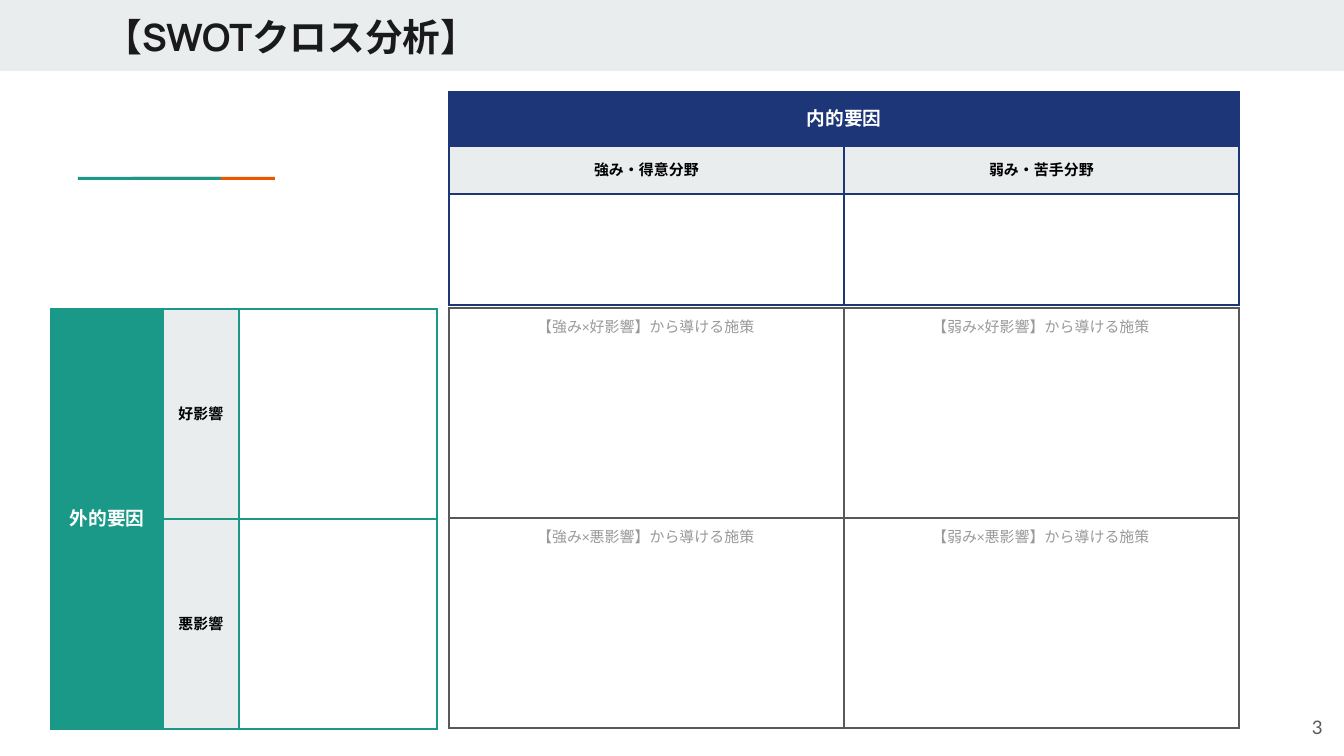
from lxml.etree import SubElement
from pptx import Presentation
from pptx.dml.color import RGBColor
from pptx.enum.shapes import MSO_SHAPE
from pptx.enum.text import MSO_ANCHOR, MSO_AUTO_SIZE, PP_ALIGN
from pptx.oxml.ns import qn
from pptx.util import Inches, Pt

PX = 9144000 / 1344  # EMU in one px of a 1344 x 756 slide

WHITE = RGBColor(0xFF, 0xFF, 0xFF)
BLACK = RGBColor(0x00, 0x00, 0x00)
INK = RGBColor(0x1A, 0x1A, 0x1A)
DARK_GREY = RGBColor(0x59, 0x59, 0x59)
MID_GREY = RGBColor(0x99, 0x99, 0x99)
PALE_GREY = RGBColor(0xE9, 0xED, 0xEE)
NAVY = RGBColor(0x1C, 0x36, 0x78)
TEAL = RGBColor(0x1A, 0x99, 0x88)
ORANGE = RGBColor(0xEB, 0x56, 0x00)

# Cross grid: two strategy columns and two strategy rows
GRID_LEFT, GRID_TOP = 449, 308
GRID_COLUMN, GRID_ROW = 395, 210


def px(*lengths):
    return [round(length * PX) for length in lengths]


def add_bar(slide, box, color):
    bar = slide.shapes.add_shape(MSO_SHAPE.RECTANGLE, *px(*box))
    bar.shadow.inherit = False
    bar.fill.solid()
    bar.fill.fore_color.rgb = color
    bar.line.fill.background()


def write(frame, text, size, font, color, bold=False, align=PP_ALIGN.CENTER):
    paragraph = frame.paragraphs[0]
    paragraph.alignment = align
    paragraph.line_spacing = 1.0
    run = paragraph.add_run()
    run.text = text
    run.font.size = Pt(size)
    run.font.bold = bold
    run.font.name = font
    run.font.color.rgb = color
    # East Asian glyphs follow the same typeface
    SubElement(run.font._element, qn("a:ea"), typeface=font)


def set_insets(target):
    target.margin_left = target.margin_right = Inches(0.1)
    target.margin_top = target.margin_bottom = Inches(0.1)


def add_label(slide, box, text, size, font, color, align=PP_ALIGN.CENTER,
              anchor=MSO_ANCHOR.TOP, fit=MSO_AUTO_SIZE.NONE):
    frame = slide.shapes.add_textbox(*px(*box)).text_frame
    frame.word_wrap = True
    frame.auto_size = fit
    frame.vertical_anchor = anchor
    set_insets(frame)
    write(frame, text, size, font, color, align=align)


def border_cell(cell, color):
    properties = cell._tc.get_or_add_tcPr()
    for side in ("a:lnL", "a:lnR", "a:lnT", "a:lnB"):
        line = SubElement(properties, qn(side), w=str(Pt(1.5)))
        fill = SubElement(line, qn("a:solidFill"))
        SubElement(fill, qn("a:srgbClr"), val=str(color))


def add_bordered_table(slide, left, top, columns, rows, color):
    table = slide.shapes.add_table(
        len(rows), len(columns), *px(left, top, sum(columns), sum(rows))).table
    table.first_row = table.horz_banding = False
    for column, width in zip(table.columns, px(*columns)):
        column.width = width
    for row, height in zip(table.rows, px(*rows)):
        row.height = height
    for cell in table.iter_cells():
        border_cell(cell, color)
        cell.fill.background()
    return table


def fill_heading(cell, text, size, color, background):
    cell.fill.solid()
    cell.fill.fore_color.rgb = background
    cell.vertical_anchor = MSO_ANCHOR.MIDDLE
    set_insets(cell)
    write(cell.text_frame, text, size, "Arial", color, bold=True)


def set_title(slide, text):
    title = slide.shapes.title
    title.left, title.top, title.width, title.height = px(91, 0, 1163, 73)
    frame = title.text_frame
    frame.auto_size = MSO_AUTO_SIZE.NONE
    frame.vertical_anchor = MSO_ANCHOR.TOP
    set_insets(frame)
    write(frame, text, 20.2, "Manrope", INK, bold=True, align=PP_ALIGN.LEFT)


def add_internal_factors(slide):
    table = add_bordered_table(slide, GRID_LEFT, 92, [GRID_COLUMN] * 2,
                               [54, 48, 111], NAVY)
    table.cell(0, 0).merge(table.cell(0, 1))
    fill_heading(table.cell(0, 0), "内的要因", 10, WHITE, NAVY)
    for column, text in enumerate(["強み・得意分野", "弱み・苦手分野"]):
        fill_heading(table.cell(1, column), text, 8, BLACK, PALE_GREY)


def add_external_factors(slide):
    table = add_bordered_table(slide, 51, GRID_TOP + 1, [112, 76, 198],
                               [GRID_ROW] * 2, TEAL)
    table.cell(0, 0).merge(table.cell(1, 0))
    fill_heading(table.cell(0, 0), "外的要因", 10, WHITE, TEAL)
    for row, text in enumerate(["好影響", "悪影響"]):
        fill_heading(table.cell(row, 1), text, 8, BLACK, PALE_GREY)


def add_strategy_prompts(slide):
    for row, influence in enumerate(["好影響", "悪影響"]):
        for column, trait in enumerate(["強み", "弱み"]):
            box = (519 + column * GRID_COLUMN, GRID_TOP + 1 + row * GRID_ROW, 254, 46)
            add_label(slide, box, f"【{trait}×{influence}】から導ける施策", 8,
                      "Calibri", MID_GREY, fit=MSO_AUTO_SIZE.SHAPE_TO_FIT_TEXT)


def main():
    presentation = Presentation()
    presentation.slide_width, presentation.slide_height = px(1344, 756)
    slide = presentation.slides.add_slide(presentation.slide_layouts[5])

    # Title band and two-colour accent line
    add_bar(slide, (0, 0, 1344, 71), PALE_GREY)
    add_bar(slide, (132, 177, 143, 3), ORANGE)
    add_bar(slide, (78, 177, 143, 3), TEAL)

    # Strategy grid with its two factor tables
    add_bordered_table(slide, GRID_LEFT, GRID_TOP, [GRID_COLUMN] * 2,
                       [GRID_ROW] * 2, DARK_GREY)
    add_internal_factors(slide)
    add_external_factors(slide)
    add_strategy_prompts(slide)

    # Page number
    add_label(slide, (1255, 698, 81, 58), "3", 10, "Lato", DARK_GREY,
              align=PP_ALIGN.RIGHT, anchor=MSO_ANCHOR.MIDDLE)

    # Title, in front of its band
    set_title(slide, "【SWOTクロス分析】")
    slide.shapes._spTree.append(slide.shapes.title._element)

    presentation.save("out.pptx")


if __name__ == "__main__":
    main()
